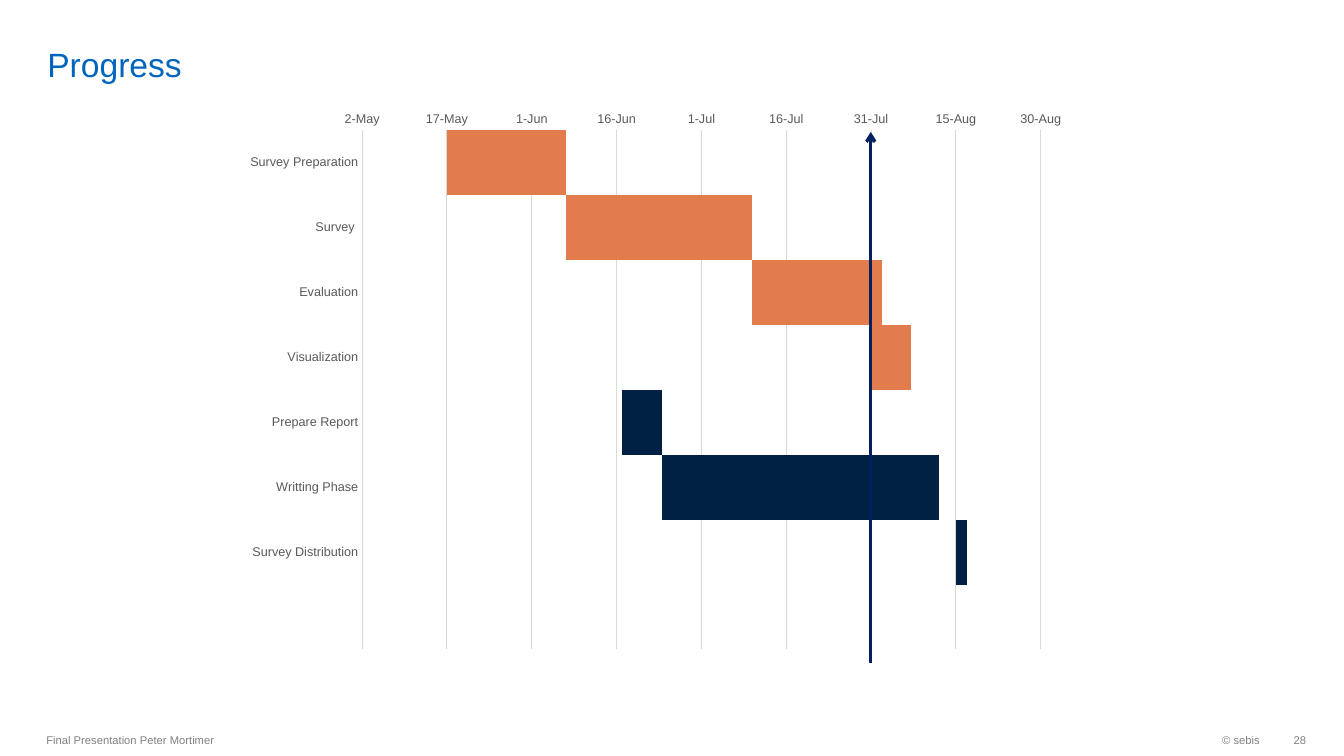
from lxml import etree
from pptx import Presentation
from pptx import util as u
from pptx.chart.data import CategoryChartData
from pptx.dml.color import RGBColor
from pptx.enum import chart as charts, shapes, text
from pptx.oxml import parse_xml
from pptx.oxml.ns import nsdecls, qn

ORANGE, NAVY, GREY = "E37C4D", "002143", "808080"
AXIS_START, AXIS_END = 41761, 41885
TASKS = [
    ("Survey Preparation", 41776, 21, ORANGE),
    ("Survey ", 41797, 33, ORANGE),
    ("Evaluation", 41830, 23, ORANGE),
    ("Visualization", 41851, 7, ORANGE),
    ("Prepare Report", 41807, 7, NAVY),
    ("Writting Phase", 41814, 49, NAVY),
    ("Survey Distribution", 41866, 2, NAVY),
    ("", None, None, NAVY),
]


def color(value):
    """Return the colour for a hex string."""
    return RGBColor.from_string(value)


def apply(target, values):
    """Set every attribute in a dict of format values."""
    for name, value in values.items():
        setattr(target, name, value)


def format_font(font, size, value):
    """Give a font its face, size and colour."""
    apply(font, {"name": "Arial", "size": u.Pt(size)})
    font.color.rgb = color(value)


def write(shape, wording, size, value, align, anchor, insets):
    """Write one formatted paragraph into a shape."""
    left, top, right, bottom = map(u.Pt, insets)
    frame = shape.text_frame
    apply(frame, {"word_wrap": True, "vertical_anchor": anchor, "margin_left": left,
                  "margin_top": top, "margin_right": right, "margin_bottom": bottom})
    paragraph = frame.paragraphs[0]
    paragraph.text = wording
    paragraph.alignment = align
    format_font(paragraph.runs[0].font, size, value)


def add_title(slide, left, top, width, height):
    """Fill the title placeholder."""
    title = slide.shapes.title
    apply(title, {"left": u.Pt(left), "top": u.Pt(top),
                  "width": u.Pt(width), "height": u.Pt(height)})
    write(title, "Progress", 24, "0065BD", text.PP_ALIGN.LEFT,
          text.MSO_ANCHOR.BOTTOM, (7.2, 0, 7.2, 0))


def add_footer(slide, left, top, width, height):
    """Place the talk name, owner and page number in a strip."""
    number_width, owner_width, talk_width = 26, 168.5, 453.6
    number_left = left + width - number_width
    parts = [
        ("Final Presentation Peter Mortimer", left, talk_width, text.PP_ALIGN.LEFT, 7.2),
        ("© sebis", number_left - owner_width, owner_width, text.PP_ALIGN.RIGHT, 7.2),
        ("28", number_left, number_width, text.PP_ALIGN.RIGHT, 0),
    ]
    for wording, part_left, part_width, align, right_inset in parts:
        box = slide.shapes.add_textbox(u.Pt(part_left), u.Pt(top),
                                       u.Pt(part_width), u.Pt(height))
        write(box, wording, 8, GREY, align, text.MSO_ANCHOR.MIDDLE,
              (7.2, 3.6, right_inset, 3.6))


def set_plot_layout(chart, x, y, w, h):
    """Fix the inner plot area as fractions of the chart."""
    plot_area = chart._chartSpace.chart.plotArea
    for layout in plot_area.findall(qn("c:layout")):
        plot_area.remove(layout)
    fractions = "".join(f'<c:{name} val="{value}"/>'
                        for name, value in zip("xywh", (x, y, w, h)))
    plot_area.insert(0, parse_xml(
        f'<c:layout {nsdecls("c")}><c:manualLayout><c:layoutTarget val="inner"/>'
        '<c:xMode val="edge"/><c:yMode val="edge"/>'
        f'{fractions}</c:manualLayout></c:layout>'))


def format_axes(chart):
    """Style the task axis and the date axis."""
    tasks, dates = chart.category_axis, chart.value_axis
    for axis in (tasks, dates):
        apply(axis, {"major_tick_mark": charts.XL_TICK_MARK.NONE,
                     "minor_tick_mark": charts.XL_TICK_MARK.NONE})
        format_font(axis.tick_labels.font, 9, "595959")
    tasks.reverse_order = True
    apply(dates, {"minimum_scale": AXIS_START, "maximum_scale": AXIS_END,
                  "major_unit": 15, "has_major_gridlines": True})
    apply(dates.tick_labels, {"number_format": r"d\-mmm",
                              "number_format_is_linked": False})
    dates.format.line.fill.background()
    for line in (tasks.format.line, dates.major_gridlines.format.line):
        line.width = u.Pt(0.75)
        line.color.rgb = color("D9D9D9")


def add_gantt(slide, left, top, width, height):
    """Add the schedule chart and the arrow marking today."""
    labels, starts, durations, fills = zip(*TASKS)
    data = CategoryChartData()
    data.categories = labels
    data.add_series("Series 1", starts)
    data.add_series("Series 2", durations)
    chart = slide.shapes.add_chart(
        charts.XL_CHART_TYPE.BAR_STACKED, u.Pt(left), u.Pt(top),
        u.Pt(width), u.Pt(height), data).chart
    apply(chart, {"has_legend": False, "has_title": False})
    format_font(chart.font, 10, "000000")
    plot = chart.plots[0]
    apply(plot, {"gap_width": 0, "overlap": 100, "vary_by_categories": False})
    offset, bars = plot.series
    offset.format.fill.background()
    bars.format.fill.solid()
    bars.format.fill.fore_color.rgb = color(ORANGE)
    for index, value in enumerate(fills):
        fill = bars.points[index].format.fill
        fill.solid()
        fill.fore_color.rgb = color(value)
    format_axes(chart)
    set_plot_layout(chart, 0.224, 0.071, 0.707, 0.866)
    add_today(slide, left + 522, top + 411, top + 31.7)


def add_today(slide, x, bottom, top):
    """Draw the upward arrow at the current date."""
    arrow = slide.shapes.add_connector(shapes.MSO_CONNECTOR.STRAIGHT,
                                       u.Pt(x), u.Pt(bottom), u.Pt(x), u.Pt(top))
    arrow.line.width = u.Pt(2.25)
    arrow.line.color.rgb = color("002060")
    etree.SubElement(arrow.line._get_or_add_ln(), qn("a:tailEnd"), type="arrow")
    etree.SubElement(arrow._element.spPr, qn("a:effectLst"))


def main():
    """Build and save the progress slide."""
    presentation = Presentation()
    apply(presentation, {"slide_width": u.Pt(960), "slide_height": u.Pt(540)})
    slide = presentation.slides.add_slide(presentation.slide_layouts[5])
    add_title(slide, 26.6, 3.6, 833.8, 56.9)
    add_gantt(slide, 100, 62.6, 708.5, 428.4)
    add_footer(slide, 26, 517.4, 907, 23)
    presentation.save("out.pptx")


if __name__ == "__main__":
    main()
